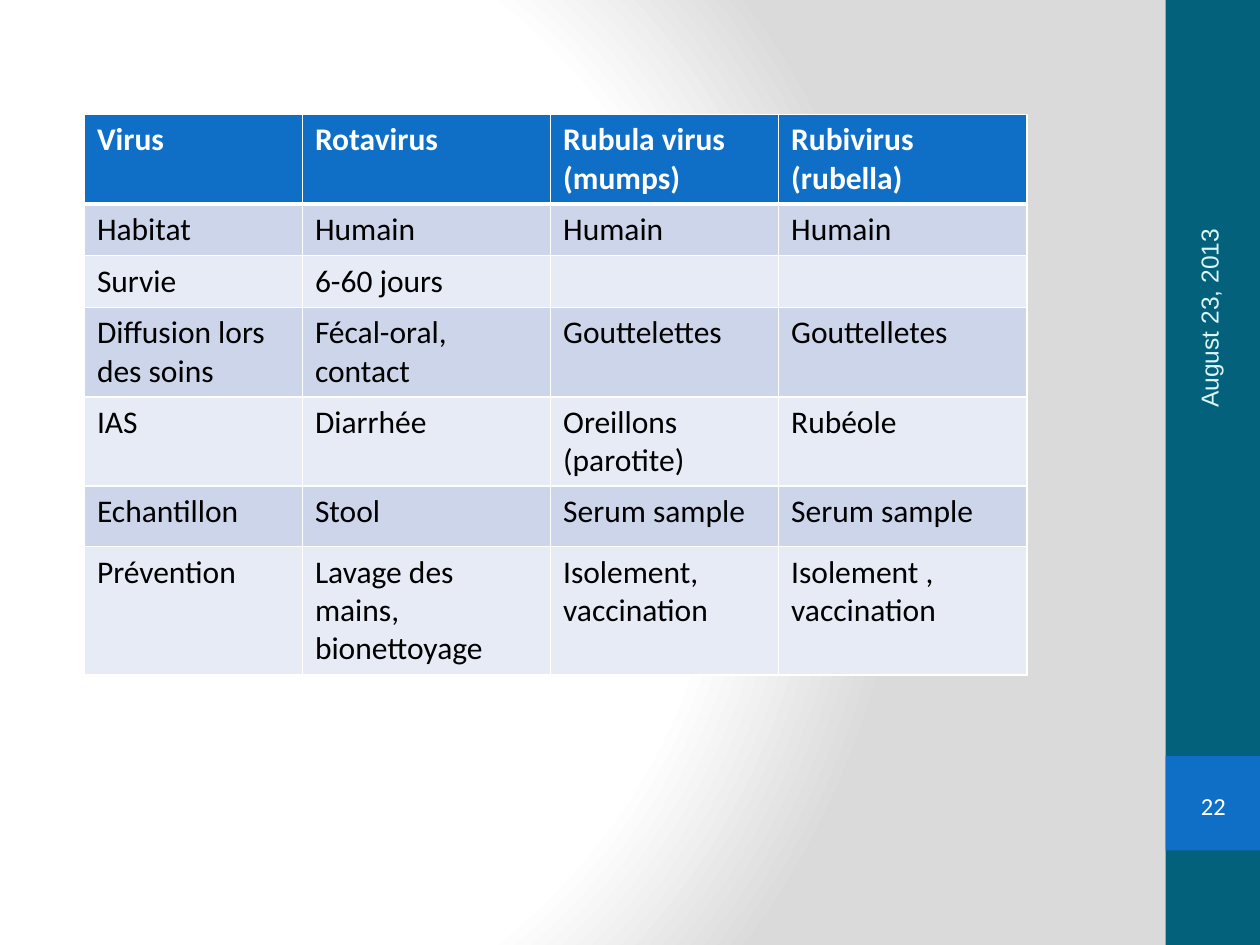
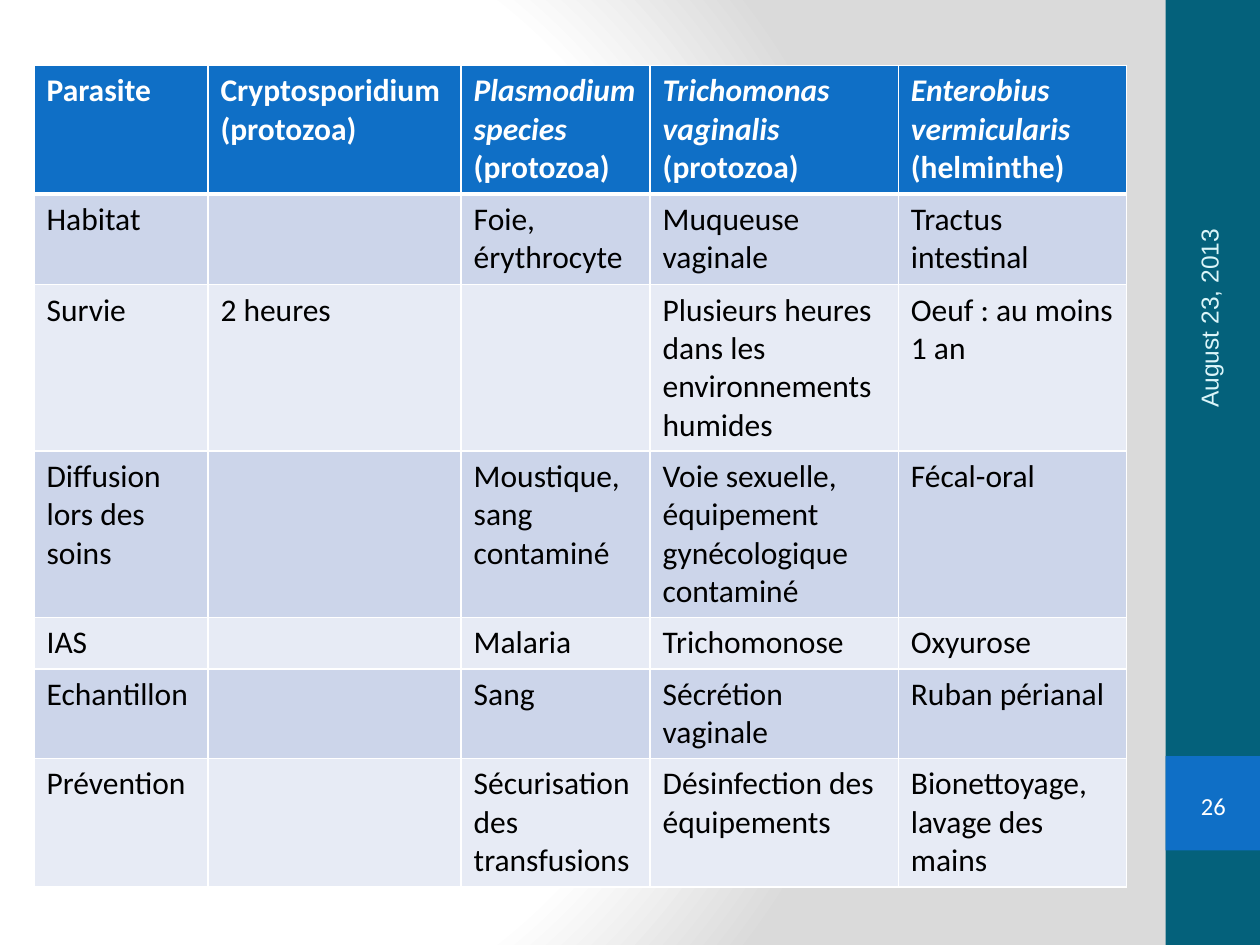
"""Build two slides of tables on viruses and parasites in healthcare infections."""
from dataclasses import dataclass
from typing import NamedTuple

from lxml import etree
from pptx import Presentation
from pptx.dml.color import RGBColor
from pptx.enum.shapes import MSO_SHAPE as Shape
from pptx.enum.text import MSO_ANCHOR as Anchor, PP_ALIGN as Align
from pptx.oxml.ns import nsdecls, qn
from pptx.util import Inches, Pt

WHITE, BLACK = "FFFFFF", "000000"
TEAL, BLUE, PALE_CYAN = "04617B", "0F6FC6", "DBF5F9"
ROW_TINTS = ("CCD5EA", "E7EBF5")
BACKDROP_STOPS = ((0, WHITE), (75, WHITE), (100, "DADADA"))
TOPICS = ("Habitat", "Survie", "Diffusion lors des soins", "IAS", "Echantillon", "Prévention")
DATE = "August 23, 2013"


class Box(NamedTuple):
    left: float
    top: float
    width: float
    height: float

    def lengths(self) -> list:
        return [Inches(value) for value in self]


class Heading(NamedTuple):
    plain: str
    species: str = ""


class Band(NamedTuple):
    box: Box
    colour: str


BANDS = (Band(Box(9.25, 0, 0.75, 7.5), TEAL), Band(Box(9.25, 6, 0.75, 0.75), BLUE))
DATE_BOX = Box(8.26, 1.8, 2.67, 0.4)
NUMBER_BOX = Box(9.33, 6.18, 0.6, 0.43)


@dataclass
class Organism:
    heading: Heading
    width: float
    facts: tuple[str, ...]


@dataclass
class TableSlide:
    number: int
    left: float
    top: float
    subject: str
    topic_width: float
    row_heights: tuple[float, ...]
    organisms: tuple[Organism, ...]


VIRUSES = TableSlide(
    22, 0.67, 0.91, "Virus", 1.73, (0.71, 0.41, 0.41, 0.71, 0.71, 0.48, 1.02),
    (
        Organism(Heading("Rotavirus"), 1.97, (
            "Humain", "6-60 jours", "Fécal-oral, contact", "Diarrhée", "Stool",
            "Lavage des mains, bionettoyage")),
        Organism(Heading("Rubula virus (mumps)"), 1.81, (
            "Humain", "", "Gouttelettes", "Oreillons (parotite)", "Serum sample",
            "Isolement, vaccination")),
        Organism(Heading("Rubivirus (rubella)"), 1.97, (
            "Humain", "", "Gouttelletes", "Rubéole", "Serum sample",
            "Isolement , vaccination")),
    ),
)

PARASITES = TableSlide(
    26, 0.27, 0.52, "Parasite", 1.38, (1.02, 0.72, 1.32, 1.32, 0.41, 0.71, 1.02),
    (
        Organism(Heading("Cryptosporidium (protozoa)"), 2.01, (
            "", "2 heures", "", "", "", "")),
        Organism(Heading(" (protozoa)", "Plasmodium species"), 1.5, (
            "Foie, érythrocyte", "", "Moustique, sang contaminé", "Malaria", "Sang",
            "Sécurisation des transfusions")),
        Organism(Heading(" (protozoa)", "Trichomonas vaginalis"), 1.97, (
            "Muqueuse vaginale", "Plusieurs heures dans les environnements humides",
            "Voie sexuelle, équipement gynécologique contaminé", "Trichomonose",
            "Sécrétion vaginale", "Désinfection des équipements")),
        Organism(Heading(" (helminthe)", "Enterobius vermicularis"), 1.81, (
            "Tractus intestinal", "Oeuf : au moins 1 an", "Fécal-oral", "Oxyurose",
            "Ruban périanal", "Bionettoyage, lavage des mains")),
    ),
)


def rgb(colour: str) -> RGBColor:
    return RGBColor.from_string(colour)


def add_run(paragraph, text: str, size: float, colour: str, font: str = "Calibri",
            bold: bool = False, italic: bool = False) -> None:
    run = paragraph.add_run()
    run.text = text
    run.font.name, run.font.size = font, Pt(size)
    run.font.bold, run.font.italic = bold, italic
    run.font.color.rgb = rgb(colour)


def set_backdrop(master) -> None:
    master.background.fill.gradient()
    properties = master.element.find(".//" + qn("p:bgPr"))
    stops = "".join(f'<a:gs pos="{position * 1000}"><a:srgbClr val="{colour}"/></a:gs>'
                    for position, colour in BACKDROP_STOPS)
    radial = etree.fromstring(
        f'<a:gradFill {nsdecls("a")} rotWithShape="1"><a:gsLst>{stops}</a:gsLst>'
        '<a:path path="circle"><a:fillToRect l="20000" t="50000" r="100000" b="50000"/>'
        "</a:path></a:gradFill>")
    properties.replace(properties.find(qn("a:gradFill")), radial)


def add_plain_shape(slide, kind: Shape, box: Box):
    shape = slide.shapes.add_shape(kind, *box.lengths())
    shape.shadow.inherit = False
    shape.line.fill.background()
    return shape


def add_side_bar(slide, number: int) -> None:
    for band in BANDS:
        strip = add_plain_shape(slide, Shape.RECTANGLE, band.box)
        strip.fill.solid()
        strip.fill.fore_color.rgb = rgb(band.colour)

    date = slide.shapes.add_textbox(*DATE_BOX.lengths())
    date.rotation = 270
    date.text_frame.word_wrap = True
    date.text_frame.vertical_anchor = Anchor.MIDDLE
    add_run(date.text_frame.paragraphs[0], DATE, 14, PALE_CYAN, "Arial")

    badge = add_plain_shape(slide, Shape.DOUBLE_BRACKET, NUMBER_BOX)
    badge.adjustments[0] = 0.179
    badge.fill.background()
    frame = badge.text_frame
    frame.margin_left = frame.margin_right = frame.margin_top = frame.margin_bottom = 0
    frame.vertical_anchor = Anchor.MIDDLE
    frame.paragraphs[0].alignment = Align.CENTER
    add_run(frame.paragraphs[0], str(number), 14, WHITE)


def style_cell(cell, row: int) -> None:
    widths = {"L": 1, "R": 1, "T": 3 if row == 1 else 1, "B": 3 if row == 0 else 1}
    properties = cell._tc.get_or_add_tcPr()
    for side, width in widths.items():
        properties.append(etree.fromstring(
            f'<a:ln{side} {nsdecls("a")} w="{Pt(width)}"><a:solidFill>'
            f'<a:srgbClr val="{WHITE}"/></a:solidFill></a:ln{side}>'))
    cell.fill.solid()
    cell.fill.fore_color.rgb = rgb(ROW_TINTS[(row - 1) % 2] if row else BLUE)


def add_fact_table(slide, content: TableSlide) -> None:
    columns = (Organism(Heading(content.subject), content.topic_width, TOPICS),
               *content.organisms)
    box = Box(content.left, content.top, sum(column.width for column in columns),
              sum(content.row_heights))
    table = slide.shapes.add_table(
        len(content.row_heights), len(columns), *box.lengths()).table
    table.horz_banding = False
    for row, height in zip(table.rows, content.row_heights):
        row.height = Inches(height)
    for index, column in enumerate(columns):
        table.columns[index].width = Inches(column.width)
        header = table.cell(0, index)
        style_cell(header, 0)
        title = header.text_frame.paragraphs[0]
        if column.heading.species:
            add_run(title, column.heading.species, 18, WHITE, bold=True, italic=True)
        add_run(title, column.heading.plain, 18, WHITE, bold=True)
        for row, fact in enumerate(column.facts, start=1):
            cell = table.cell(row, index)
            style_cell(cell, row)
            if fact:
                add_run(cell.text_frame.paragraphs[0], fact, 18, BLACK)


def main() -> None:
    deck = Presentation()
    deck.slide_width, deck.slide_height = Inches(10), Inches(7.5)
    set_backdrop(deck.slide_master)
    for content in (VIRUSES, PARASITES):
        slide = deck.slides.add_slide(deck.slide_layouts[6])
        add_side_bar(slide, content.number)
        add_fact_table(slide, content)
    deck.save("out.pptx")


if __name__ == "__main__":
    main()
